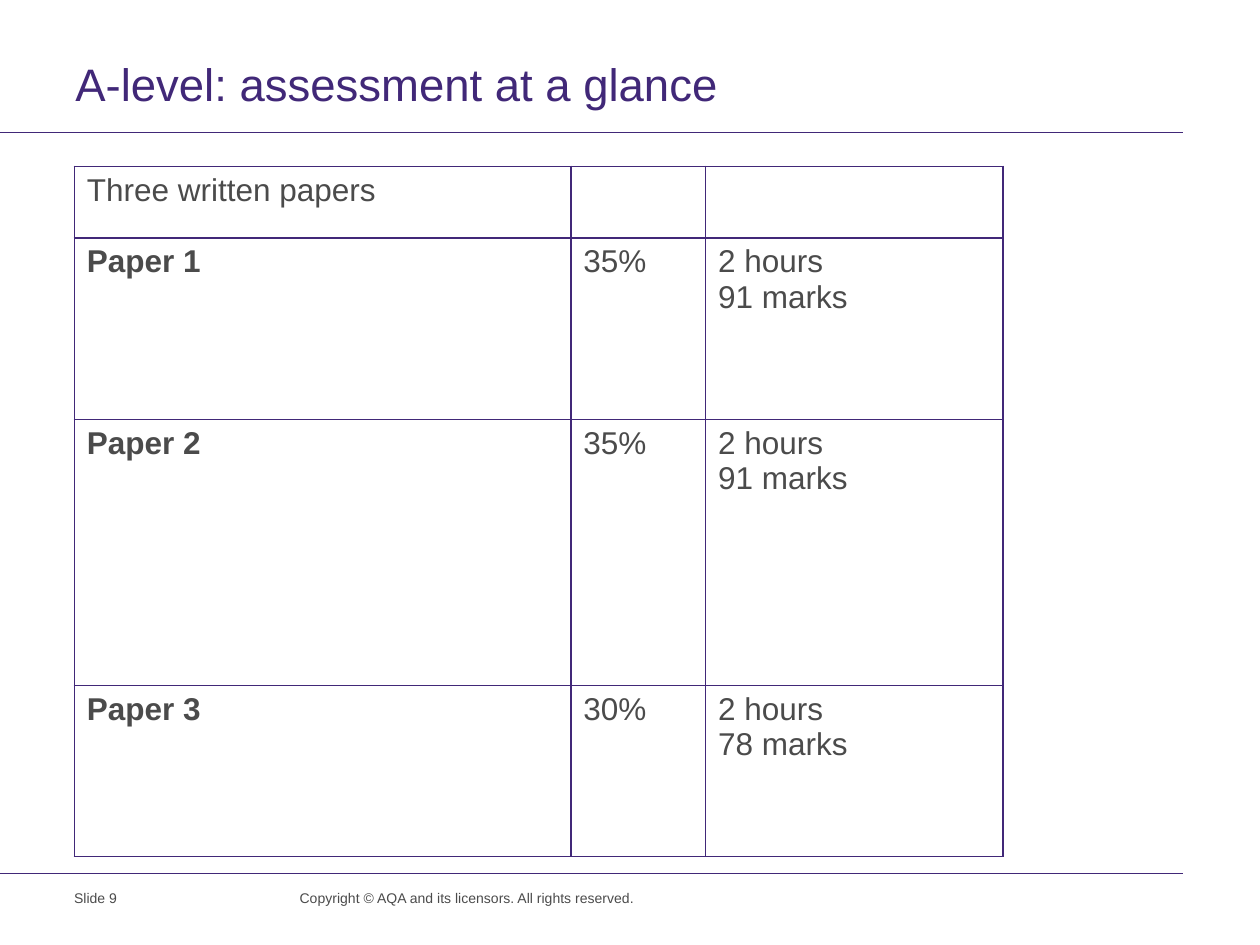
from pptx import Presentation
from pptx.dml.color import RGBColor
from pptx.enum.shapes import MSO_CONNECTOR
from pptx.enum.text import MSO_ANCHOR
from pptx.oxml import parse_xml
from pptx.oxml.ns import nsdecls
from pptx.util import Inches, Pt

PURPLE, GREY = "412878", "4B4B4B"
TEXTS = [
    ("A-level: assessment at a glance", (0.5, 0.44, 9.5, 0.48), 26, PURPLE, 28),
    ("Slide 9", (0.49, 7.01, 1.56, 0.38), 8, GREY, None),
    ("Copyright © AQA and its licensors. All rights reserved.",
     (2.28, 7.01, 3.2, 0.26), 8, GREY, None),
]
RULES = [1.05, 6.93]
COLS = [3.94, 1.07, 2.36]
ROWS = [
    (0.57, ["Three written papers", "", ""]),
    (1.44, ["Paper 1", "35%", "2 hours\n91 marks"]),
    (2.11, ["Paper 2", "35%", "2 hours\n91 marks"]),
    (1.36, ["Paper 3", "30%", "2 hours\n78 marks"]),
]


def tint(code):
    return RGBColor.from_string(code)


def style(frame, size, code, bold=False, space=None):
    form = {"name": "Arial", "size": Pt(size), "bold": bold}
    for para in frame.paragraphs:
        for key, value in form.items():
            setattr(para.font, key, value)
        para.font.color.rgb = tint(code)
        if space:
            para.line_spacing = Pt(space)


def border(cell):
    props = cell._tc.get_or_add_tcPr()
    for i, side in enumerate("LRTB"):
        props.insert(i, parse_xml(
            f'<a:ln{side} {nsdecls("a")} w="{Pt(1)}"><a:solidFill>'
            f'<a:srgbClr val="{PURPLE}"/></a:solidFill></a:ln{side}>'))


def add_rule(slide, y):
    line = slide.shapes.add_connector(
        MSO_CONNECTOR.STRAIGHT, 0, Inches(y), Inches(9.39), Inches(y))
    line.line.color.rgb = tint(PURPLE)
    line.line.width = Pt(0.6)
    line._element.spPr.append(parse_xml(f'<a:effectLst {nsdecls("a")}/>'))


def add_text(slide, text, area, size, code, space):
    frame = slide.shapes.add_textbox(*map(Inches, area)).text_frame
    frame.word_wrap = True
    frame.vertical_anchor = MSO_ANCHOR.TOP
    frame.text = text
    style(frame, size, code, space=space)


def add_grid(slide):
    area = (0.59, 1.32, sum(COLS), sum(high for high, _ in ROWS))
    grid = slide.shapes.add_table(
        len(ROWS), len(COLS), *map(Inches, area)).table
    grid.first_row = grid.horz_banding = False
    for col, wide in zip(grid.columns, COLS):
        col.width = Inches(wide)
    for row, (high, texts) in zip(grid.rows, ROWS):
        row.height = Inches(high)
        for cell, text in zip(row.cells, texts):
            cell.text = text
            cell.fill.background()
            style(cell.text_frame, 18, GREY, text.startswith("Paper"))
            border(cell)


def main():
    deck = Presentation()
    deck.slide_width, deck.slide_height = Inches(10), Inches(7.5)
    slide = deck.slides.add_slide(deck.slide_layouts[6])
    for y in RULES:
        add_rule(slide, y)
    for item in TEXTS:
        add_text(slide, *item)
    add_grid(slide)
    deck.save("out.pptx")


if __name__ == "__main__":
    main()
